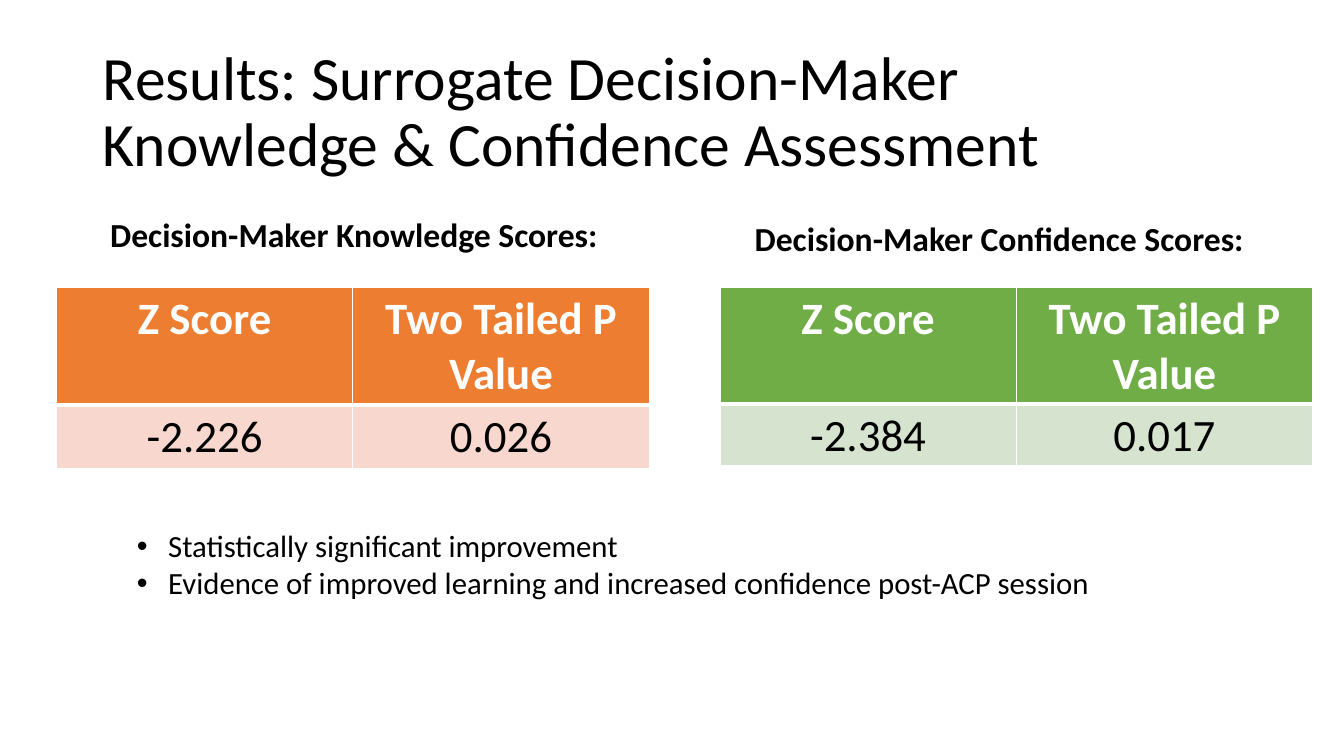
from pptx import Presentation
from pptx.util import Inches, Pt
from pptx.dml.color import RGBColor
from pptx.enum.text import PP_ALIGN as Align, MSO_ANCHOR as Anchor
from pptx.oxml import parse_xml
from pptx.oxml.ns import nsdecls

TITLE = "Results: Surrogate Decision-Maker Knowledge & Confidence Assessment"
HEADER = ["Z Score", "Two Tailed P Value"]
PANELS = [
    dict(heading="Decision-Maker Knowledge Scores:", values=["-2.226", "0.026"],
         heading_at=(0.74, 2.07), left=0.56, bottom_margin=0.05,
         fills=["ED7D31", "F8D7CE"]),
    dict(heading="Decision-Maker Confidence Scores:", values=["-2.384", "0.017"],
         heading_at=(7.14, 2.11), left=7.14, bottom_margin=0.03,
         fills=["70AD47", "D5E3CF"]),
]
FINDINGS = ["Statistically significant improvement",
            "Evidence of improved learning and increased confidence post-ACP session"]
FONT, BLACK, WHITE = "Calibri", "000000", "FFFFFF"
TABLE_TOP, COL_W, ROW_H = 2.85, 2.94, [1.16, 0.6]


def rgb(value):
    return RGBColor.from_string(value)


def add_run(p, text, size, color=BLACK, bold=False):
    r = p.add_run()
    r.text = text
    r.font.name, r.font.size, r.font.bold = FONT, Pt(size), bold
    r.font.color.rgb = rgb(color)


def add_text(s, box, lines, size, bold=False, align=Align.LEFT,
             anchor=Anchor.TOP, spacing=1.0, bullet=False):
    tf = s.shapes.add_textbox(*map(Inches, box)).text_frame
    tf.word_wrap, tf.vertical_anchor = True, anchor
    for i, line in enumerate(lines):
        p = tf.add_paragraph() if i else tf.paragraphs[0]
        p.alignment, p.line_spacing = align, spacing
        add_run(p, line, size, bold=bold)
        if bullet:
            pPr = p._p.get_or_add_pPr()
            indent = Inches(0.31)
            pPr.set("marL", str(indent))
            pPr.set("indent", str(-indent))
            pPr.append(parse_xml(f'<a:buFont {nsdecls("a")} typeface="Arial"/>'))
            pPr.append(parse_xml(f'<a:buChar {nsdecls("a")} char="•"/>'))


def set_borders(cell, widths):
    tcPr = cell._tc.get_or_add_tcPr()
    for i, (side, width) in enumerate(widths.items()):
        tcPr.insert(i, parse_xml(
            f'<a:ln{side} {nsdecls("a")} w="{Pt(width)}"><a:solidFill>'
            f'<a:srgbClr val="{WHITE}"/></a:solidFill></a:ln{side}>'))


def add_scores(s, panel):
    rows = [HEADER, panel["values"]]
    box = (panel["left"], TABLE_TOP, COL_W * len(HEADER), sum(ROW_H))
    table = s.shapes.add_table(len(rows), len(HEADER), *map(Inches, box)).table
    for col in table.columns:
        col.width = Inches(COL_W)
    for i, row in enumerate(rows):
        table.rows[i].height = Inches(ROW_H[i])
        head = i == 0
        for j, text in enumerate(row):
            cell = table.cell(i, j)
            cell.margin_bottom = Inches(panel["bottom_margin"])
            cell.fill.solid()
            cell.fill.fore_color.rgb = rgb(panel["fills"][i])
            set_borders(cell, dict(L=1, R=1, T=1 if head else 3, B=3 if head else 1))
            p = cell.text_frame.paragraphs[0]
            p.alignment = Align.CENTER
            add_run(p, text, 32, WHITE if head else BLACK, head)


def main():
    prs = Presentation()
    prs.slide_width, prs.slide_height = Inches(13.33), Inches(7.5)
    s = prs.slides.add_slide(prs.slide_layouts[6])
    add_text(s, (0.92, 0.4, 11.5, 1.45), [TITLE], 44, anchor=Anchor.MIDDLE, spacing=0.9)
    for panel in PANELS:
        add_text(s, (*panel["heading_at"], 5.54, 0.5), [panel["heading"]], 24,
                 bold=True, align=Align.CENTER)
        add_scores(s, panel)
    add_text(s, (1.26, 5.18, 10.35, 0.84), FINDINGS, 22, bullet=True)
    prs.save("out.pptx")


if __name__ == "__main__":
    main()
